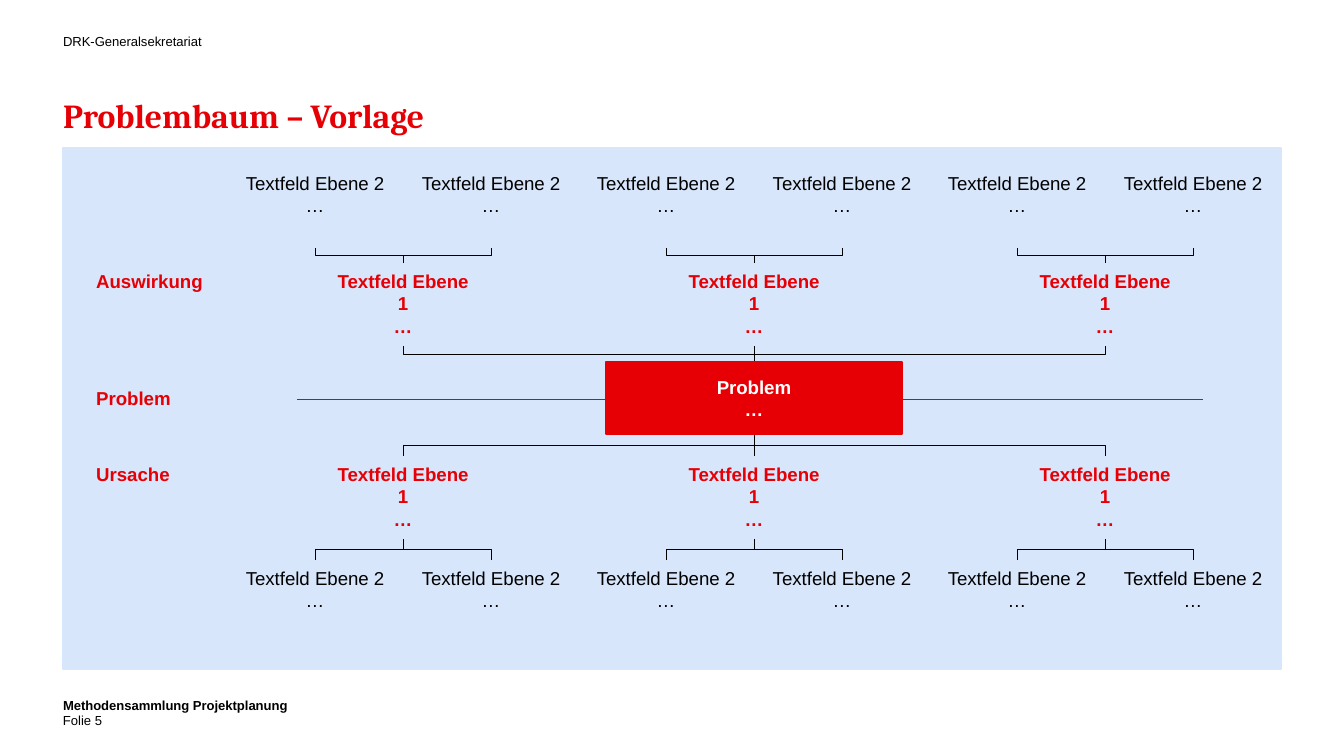
from pptx import Presentation
from pptx.dml.color import RGBColor
from pptx.enum.dml import MSO_LINE
from pptx.enum.shapes import MSO_CONNECTOR, MSO_SHAPE
from pptx.enum.text import MSO_ANCHOR, PP_ALIGN
from pptx.oxml.ns import qn
from pptx.util import Pt
from lxml import etree

SLIDE_W, SLIDE_H = 1344, 756
EMU_PER_PX = 9144000 / SLIDE_W
TITLE_ONLY = 5
RED, BLACK, WHITE, PALE_BLUE = "E60005", "000000", "FFFFFF", "D7E6FA"
LEFT, CENTER = PP_ALIGN.LEFT, PP_ALIGN.CENTER
TOP, MIDDLE, BOTTOM = MSO_ANCHOR.TOP, MSO_ANCHOR.MIDDLE, MSO_ANCHOR.BOTTOM
ELBOW, STRAIGHT = MSO_CONNECTOR.ELBOW, MSO_CONNECTOR.STRAIGHT
RECTANGLE = MSO_SHAPE.RECTANGLE
DOTTED = MSO_LINE.ROUND_DOT

FIELD_W, FIELD_H = 170, 83
BRANCH_CENTERS = [403 + 351 * branch for branch in range(3)]
TWIG_OFFSETS = (-88, 88)
EFFECT_2_TOP, EFFECT_1_TOP, CAUSE_1_TOP, CAUSE_2_TOP = 165, 263, 456, 560
PROBLEM_X, PROBLEM_TOP, PROBLEM_W, PROBLEM_H = 754, 362, 296, 72
ROW_LABELS = [("Auswirkung", 263, 134), ("Problem", 380, 102), ("Ursache", 456, 101)]


def px(length):
    """Convert pixels to EMU."""
    return round(length * EMU_PER_PX)


def rgb(code):
    """Convert a hex string to a colour."""
    return RGBColor.from_string(code)


def write(frame, lines, size, color, bold=False, align=LEFT, font="Arial", spacing=None):
    """Fill a text frame with one paragraph per line."""
    for index, line in enumerate(lines):
        paragraph = frame.add_paragraph() if index else frame.paragraphs[0]
        paragraph.alignment = align
        if spacing:
            paragraph.line_spacing = Pt(spacing)
        run = paragraph.add_run()
        run.text = line
        run.font.name, run.font.size, run.font.bold = font, Pt(size), bold
        run.font.color.rgb = rgb(color)


def clear_insets(frame):
    """Remove the inner margins of a text frame."""
    frame.margin_left = frame.margin_top = frame.margin_right = frame.margin_bottom = 0


def add_title(slide, text):
    """Place and format the title placeholder."""
    title = slide.shapes.title
    title.left, title.top, title.width, title.height = px(63), px(90), px(1083), px(39)
    frame = title.text_frame
    frame.vertical_anchor = TOP
    clear_insets(frame)
    write(frame, [text], 18, RED, bold=True, font="Cambria", spacing=24)


def add_margin_text(slide, text, left, top, width, height, bold=False, anchor=TOP):
    """Add a small header or footer line."""
    frame = slide.shapes.add_textbox(px(left), px(top), px(width), px(height)).text_frame
    frame.word_wrap = True
    frame.vertical_anchor = anchor
    clear_insets(frame)
    write(frame, [text], 7, BLACK, bold, spacing=9)


def add_label(slide, lines, left, top, width, height, color, bold, align=LEFT):
    """Add unwrapped text of the tree."""
    box = slide.shapes.add_textbox(px(left), px(top), px(width), px(height))
    box.text_frame.word_wrap = False
    write(box.text_frame, lines, 10, color, bold, align)


def add_field(slide, level, center, top):
    """Add a text field of the given level centred on a branch."""
    main_level = level == 1
    add_label(slide, [f"Textfeld Ebene {level}", "…"], center - FIELD_W // 2, top,
              FIELD_W, FIELD_H, RED if main_level else BLACK, main_level, CENTER)


def add_rectangle(slide, left, top, width, height, color, line_width):
    """Add a rectangle in one colour."""
    rectangle = slide.shapes.add_shape(RECTANGLE, px(left), px(top), px(width), px(height))
    rectangle.shadow.inherit = False
    rectangle.fill.solid()
    rectangle.fill.fore_color.rgb = rgb(color)
    rectangle.line.color.rgb = rgb(color)
    rectangle.line.width = Pt(line_width)
    return rectangle


def add_line(slide, kind, begin, end, color):
    """Add a hairline connector without shadow."""
    line = slide.shapes.add_connector(kind, *map(px, begin + end))
    line.line.color.rgb = rgb(color)
    line.line.width = Pt(0.25)
    etree.SubElement(line._element.spPr, qn("a:effectLst"))
    return line


def add_branch(slide, lower, upper):
    """Join two points by an elbow that leaves and arrives vertically."""
    (lower_x, lower_y), (upper_x, upper_y) = lower, upper
    middle_x, middle_y = (lower_x + upper_x) / 2, (lower_y + upper_y) / 2
    side = 1 if upper_x >= lower_x else -1
    run = side * (lower_y - upper_y) / 2
    rise = abs(upper_x - lower_x) / 2
    branch = add_line(slide, ELBOW, (middle_x + run, middle_y + rise),
                      (middle_x - run, middle_y - rise), BLACK)
    quarter_turns = 1 if side > 0 else 3
    branch._element.spPr.find(qn("a:xfrm")).set("rot", str(quarter_turns * 5400000))


def add_tree(slide):
    """Add the fields and branches above and below the problem."""
    for center in BRANCH_CENTERS:
        add_field(slide, 1, center, EFFECT_1_TOP)
        add_field(slide, 1, center, CAUSE_1_TOP)
        add_branch(slide, (PROBLEM_X, PROBLEM_TOP), (center, EFFECT_1_TOP + FIELD_H))
        add_branch(slide, (center, CAUSE_1_TOP), (PROBLEM_X, PROBLEM_TOP + PROBLEM_H))
        for twig in (center + offset for offset in TWIG_OFFSETS):
            add_field(slide, 2, twig, EFFECT_2_TOP)
            add_field(slide, 2, twig, CAUSE_2_TOP)
            add_branch(slide, (center, EFFECT_1_TOP), (twig, EFFECT_2_TOP + FIELD_H))
            add_branch(slide, (twig, CAUSE_2_TOP), (center, CAUSE_1_TOP + FIELD_H))


def add_problem(slide):
    """Add the central problem box on its dotted axis."""
    axis = add_line(slide, STRAIGHT, (297, 399), (1202, 399), RED)
    axis.line.dash_style = DOTTED
    problem = add_rectangle(slide, PROBLEM_X - PROBLEM_W // 2, PROBLEM_TOP,
                            PROBLEM_W, PROBLEM_H, RED, 0.75)
    problem.text_frame.vertical_anchor = MIDDLE
    write(problem.text_frame, ["Problem", "…"], 10, WHITE, True, CENTER)


def main():
    """Build and save the problem tree slide."""
    presentation = Presentation()
    presentation.slide_width, presentation.slide_height = px(SLIDE_W), px(SLIDE_H)
    slide = presentation.slides.add_slide(presentation.slide_layouts[TITLE_ONLY])
    add_title(slide, "Problembaum – Vorlage")
    add_margin_text(slide, "DRK-Generalsekretariat", 63, 32, 241, 16)
    add_rectangle(slide, 63, 148, 1218, 521, PALE_BLUE, 1)
    add_tree(slide)
    for text, top, width in ROW_LABELS:
        add_label(slide, [text], 83, top, width, 36, RED, True)
    add_problem(slide)
    add_margin_text(slide, "Methodensammlung Projektplanung", 63, 696, 1218, 12, bold=True)
    add_margin_text(slide, "Folie", 63, 711, 40, 17, anchor=BOTTOM)
    add_margin_text(slide, "5", 95, 712, 302, 16, anchor=BOTTOM)
    presentation.save("out.pptx")


if __name__ == "__main__":
    main()
